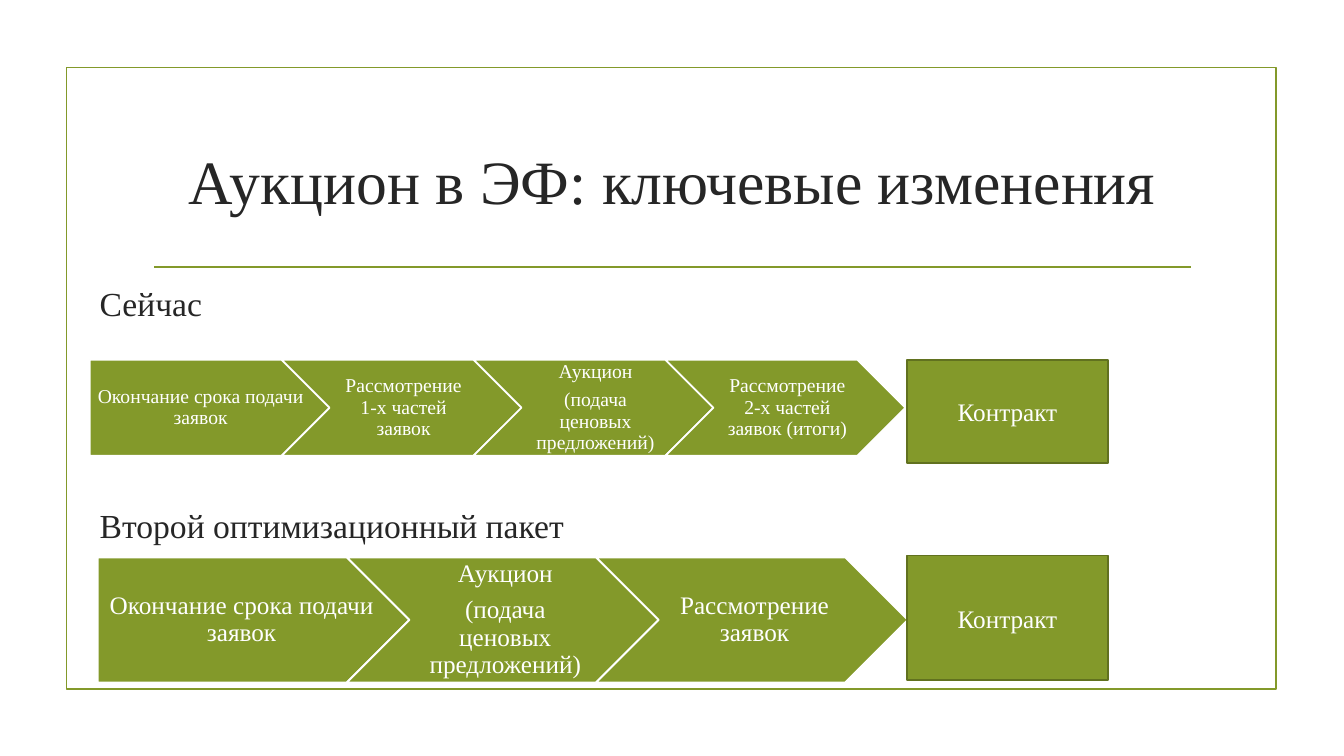
"""Build the slide on key changes to the electronic auction."""
from lxml import etree
from pptx import Presentation
from pptx import util as u
from pptx.dml.color import RGBColor
from pptx.enum import shapes, text
from pptx.oxml import ns

GREEN = RGBColor(0x83, 0x99, 0x2A)
DARK_GREEN = RGBColor(0x61, 0x71, 0x1F)
WHITE = RGBColor(0xFF, 0xFF, 0xFF)
INK = RGBColor(0x26, 0x26, 0x26)
FONT = "Times New Roman"
WIDTH, HEIGHT = u.Inches(13.33), u.Inches(7.5)
LINE_WIDTH = u.Pt(1.25)
STEP_PITCH = 0.8
LABEL_LEFT = 6.68
CONTRACT_LEFT, CONTRACT_WIDTH = 67.5, 14.93

NOW_STEPS = [
    ["Окончание срока подачи заявок"],
    ["Рассмотрение 1-х частей заявок"],
    ["Аукцион", "(подача ценовых предложений)"],
    ["Рассмотрение 2-х частей заявок (итоги)"],
]
NEW_STEPS = [
    ["Окончание срока подачи заявок"],
    ["Аукцион", "(подача ценовых предложений)"],
    ["Рассмотрение заявок"],
]


def area(left, top, width, height):
    """Turn percentages of the slide into a position and size."""
    return (round(WIDTH * left / 100), round(HEIGHT * top / 100),
            round(WIDTH * width / 100), round(HEIGHT * height / 100))


def write(tf, lines, size, color, align):
    """Fill a text frame with evenly formatted paragraphs."""
    tf.word_wrap = True
    for i, line in enumerate(lines):
        p = tf.paragraphs[0] if i == 0 else tf.add_paragraph()
        p.text = line
        p.alignment = align
        p.font.name, p.font.size = FONT, u.Pt(size)
        p.font.color.rgb = color


def add_block(s, kind, box, line, fill=None):
    """Add an outlined preset shape without a shadow."""
    sp = s.shapes.add_shape(kind, *area(*box))
    sp.shadow.inherit = False
    if fill is None:
        sp.fill.background()
    else:
        sp.fill.solid()
        sp.fill.fore_color.rgb = fill
    sp.line.color.rgb = line
    sp.line.width = LINE_WIDTH
    return sp


def add_rule(s, left, right, top):
    """Add the horizontal line under the title."""
    x1, y, x2, _ = area(left, top, right, 0)
    rule = s.shapes.add_connector(shapes.MSO_CONNECTOR.STRAIGHT, x1, y, x2, y)
    rule.line.color.rgb = GREEN
    rule.line.width = LINE_WIDTH
    etree.SubElement(rule._element.spPr, ns.qn("a:effectLst"))


def add_title(s, title, box):
    """Place and format the title placeholder."""
    sp = s.shapes.title
    sp.left, sp.top, sp.width, sp.height = area(*box)
    write(sp.text_frame, [title], 44, INK, text.PP_ALIGN.CENTER)
    sp.text_frame.vertical_anchor = text.MSO_ANCHOR.MIDDLE


def add_label(s, label, top):
    """Add the heading of a process."""
    sp = s.shapes.add_textbox(*area(LABEL_LEFT, top, 86.55, 6))
    write(sp.text_frame, [label], 24, INK, text.PP_ALIGN.LEFT)


def add_process(s, steps, box, size):
    """Add a row of overlapping arrows, the first with a flat tail."""
    left, top, width, height = box
    for i, lines in enumerate(steps):
        kind = shapes.MSO_SHAPE.CHEVRON if i else shapes.MSO_SHAPE.PENTAGON
        step = (left + i * width * STEP_PITCH, top, width, height)
        sp = add_block(s, kind, step, WHITE, GREEN)
        tf = sp.text_frame
        write(tf, lines, size, WHITE, text.PP_ALIGN.CENTER)
        tf.vertical_anchor = text.MSO_ANCHOR.MIDDLE
        tf.margin_left = u.Pt(size * (0.3 if i else 0.4))
        tf.margin_right = u.Pt(size * 0.1)
        tf.margin_top = tf.margin_bottom = u.Pt(size * 0.2)
        for p in tf.paragraphs:
            p.line_spacing = 0.9
            p.space_after = u.Pt(size * 0.35)


def add_contract(s, top, height):
    """Add the contract box that ends a process."""
    box = (CONTRACT_LEFT, top, CONTRACT_WIDTH, height)
    sp = add_block(s, shapes.MSO_SHAPE.RECTANGLE, box, DARK_GREEN, GREEN)
    write(sp.text_frame, ["Контракт"], 18, WHITE, text.PP_ALIGN.CENTER)
    sp.text_frame.vertical_anchor = text.MSO_ANCHOR.MIDDLE


def main():
    """Build and save the slide."""
    prs = Presentation()
    prs.slide_width, prs.slide_height = WIDTH, HEIGHT
    s = prs.slides.add_slide(prs.slide_layouts[5])
    add_block(s, shapes.MSO_SHAPE.RECTANGLE, (4.95, 8.93, 90, 82.27), GREEN)
    add_rule(s, 11.48, 88.6, 35.33)
    add_title(s, "Аукцион в ЭФ: ключевые изменения", (10.65, 14.27, 78.77, 19.07))
    add_label(s, "Сейчас", 36.8)
    add_process(s, NOW_STEPS, (LABEL_LEFT, 47.6, 17.85, 12.67), 14)
    add_contract(s, 47.6, 13.6)
    add_label(s, "Второй оптимизационный пакет", 66.13)
    add_process(s, NEW_STEPS, (7.28, 73.73, 23.18, 16.53), 18)
    add_contract(s, 73.47, 16.53)
    prs.save("out.pptx")


if __name__ == "__main__":
    main()
